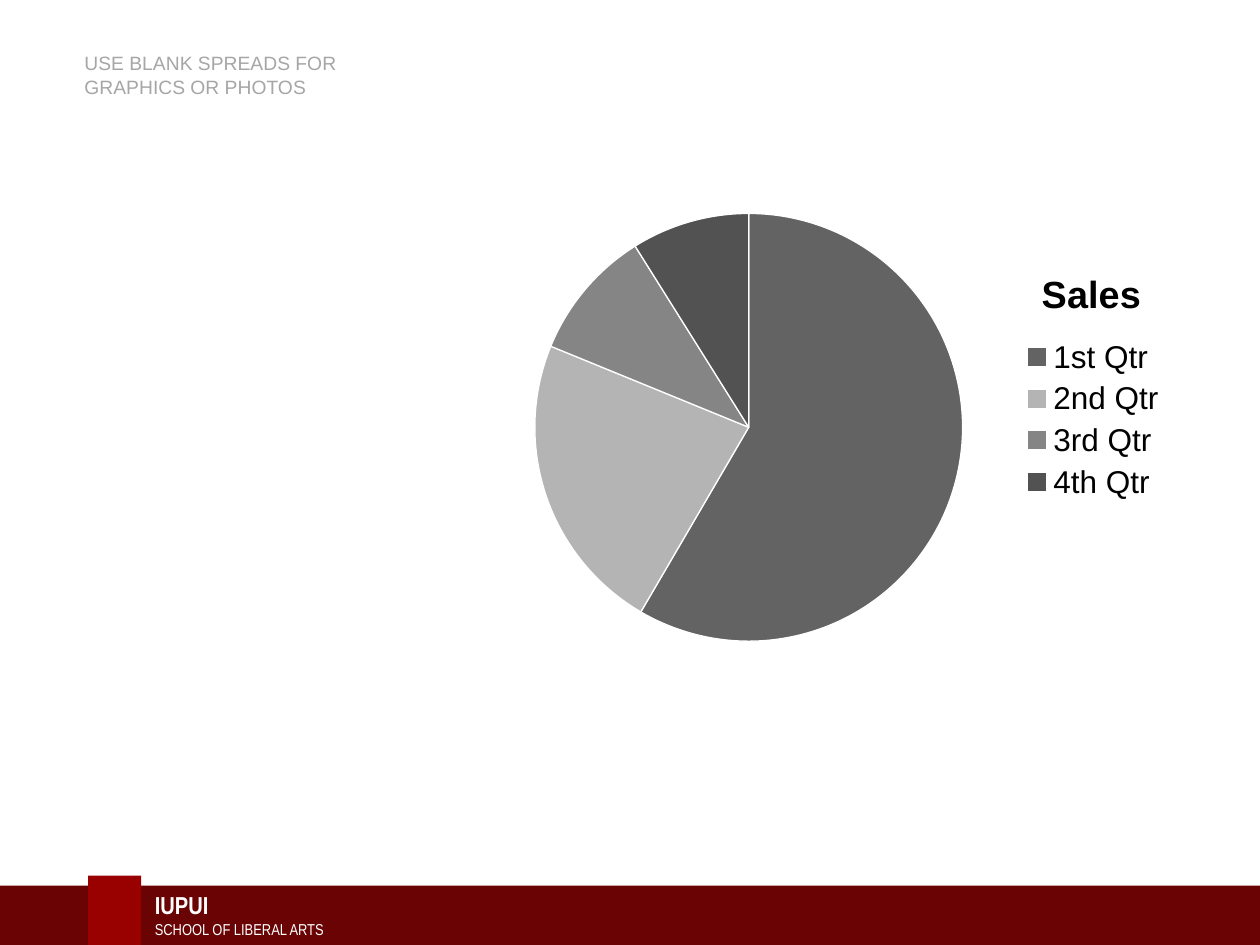
from dataclasses import dataclass

from lxml.etree import SubElement
from pptx import Presentation
from pptx.chart.data import CategoryChartData
from pptx.dml.color import RGBColor
from pptx.enum.chart import XL_CHART_TYPE, XL_LEGEND_POSITION
from pptx.enum.shapes import MSO_SHAPE
from pptx.enum.text import MSO_ANCHOR, PP_ALIGN
from pptx.oxml.ns import qn
from pptx.util import Inches, Pt

COLORS = {
    "band": "690304", "block": "990000", "white": "FFFFFF",
    "heading": "A6A6A6", "black": "000000",
    "q1": "636363", "q2": "B4B4B4", "q3": "858585", "q4": "525252",
}


@dataclass
class Box:
    left: float
    top: float
    width: float
    height: float

    def lengths(self) -> list:
        return [Inches(v) for v in (self.left, self.top, self.width, self.height)]


@dataclass
class Bar:
    box: Box
    color: str


@dataclass
class Line:
    text: str
    size: float
    bold: bool


@dataclass
class Quarter:
    name: str
    sales: int
    color: str


FOOTER_BARS = [
    Bar(Box(0, 7.03, 10, 0.47), "band"),
    Bar(Box(0.7, 6.95, 0.42, 0.55), "block"),
]
FOOTER_LINES = [Line("IUPUI", 14, True), Line("SCHOOL OF LIBERAL ARTS", 9, False)]
QUARTERS = [
    Quarter("1st Qtr", 59, "q1"), Quarter("2nd Qtr", 23, "q2"),
    Quarter("3rd Qtr", 10, "q3"), Quarter("4th Qtr", 9, "q4"),
]


def rgb(name: str) -> RGBColor:
    return RGBColor.from_string(COLORS[name])


def set_font(font, color: str, **values) -> None:
    for key, value in values.items():
        setattr(font, key, value)
    font.color.rgb = rgb(color)


def add_bar(s, bar: Bar) -> None:
    sp = s.shapes.add_shape(MSO_SHAPE.RECTANGLE, *bar.box.lengths())
    sp.shadow.inherit = False
    sp.fill.solid()
    sp.fill.fore_color.rgb = rgb(bar.color)
    sp.line.fill.background()


def add_footer_text(s, box: Box, lines: list[Line]) -> None:
    tf = s.shapes.add_textbox(*box.lengths()).text_frame
    tf.word_wrap = True
    tf.vertical_anchor = MSO_ANCHOR.MIDDLE
    for i, line in enumerate(lines):
        p = tf.add_paragraph() if i else tf.paragraphs[0]
        r = p.add_run()
        r.text = line.text
        set_font(r.font, "white", name="Arial Narrow", size=Pt(line.size), bold=line.bold)


def place_title(s, box: Box, text: str) -> None:
    sp = s.shapes.title
    sp.left, sp.top, sp.width, sp.height = box.lengths()
    tf = sp.text_frame
    tf.text = text
    tf.word_wrap = True
    tf.vertical_anchor = MSO_ANCHOR.TOP
    p = tf.paragraphs[0]
    p.alignment = PP_ALIGN.LEFT
    set_font(p.runs[0].font, "heading", name="Arial", size=Pt(11), bold=False)


def set_layout(parent, index: int, **values) -> None:
    """Give a chart part a manual layout, in fractions of the chart."""
    for old in parent.findall(qn("c:layout")):
        parent.remove(old)
    layout = SubElement(parent, qn("c:layout"))
    parent.insert(index, layout)
    manual = SubElement(layout, qn("c:manualLayout"))
    for tag, value in values.items():
        SubElement(manual, qn(f"c:{tag}")).set("val", str(value))


def add_sales_pie(s, box: Box, quarters: list[Quarter]) -> None:
    data = CategoryChartData()
    data.categories = [q.name for q in quarters]
    data.add_series("Sales", [q.sales for q in quarters])
    chart = s.shapes.add_chart(XL_CHART_TYPE.PIE, *box.lengths(), data).chart
    set_font(chart.font, "black", name="Arial", size=Pt(18))

    chart.has_title = True
    title = chart.chart_title
    title.text_frame.text = "Sales"
    r = title.text_frame.paragraphs[0].runs[0]
    set_font(r.font, "black", name="Arial", size=Pt(21.6), bold=True)
    set_layout(title._element, 1, xMode="edge", yMode="edge", x=0.82, y=0.28)

    chart.has_legend = True
    chart.legend.position = XL_LEGEND_POSITION.RIGHT
    chart.legend.include_in_layout = False
    plot = chart.plots[0]
    plot.vary_by_categories = True
    set_layout(plot._element.getparent(), 0, layoutTarget="inner", xMode="edge",
               yMode="edge", x=0.197, y=0.111, w=0.533, h=0.8)
    for i, quarter in enumerate(quarters):
        fmt = plot.series[0].points[i].format
        fmt.fill.solid()
        fmt.fill.fore_color.rgb = rgb(quarter.color)
        fmt.line.color.rgb = rgb("white")
        fmt.line.width = Pt(0.75)


def main() -> None:
    prs = Presentation()
    prs.slide_width, prs.slide_height = Inches(10), Inches(7.5)
    s = prs.slides.add_slide(prs.slide_layouts[5])
    for bar in FOOTER_BARS:
        add_bar(s, bar)
    add_footer_text(s, Box(1.13, 7.01, 3.95, 0.49), FOOTER_LINES)
    add_sales_pie(s, Box(2.99, 0.5, 6.37, 5.66), QUARTERS)
    place_title(s, Box(0.57, 0.36, 2.78, 0.47), "USE BLANK SPREADS FOR GRAPHICS OR PHOTOS")
    prs.save("out.pptx")


if __name__ == "__main__":
    main()
